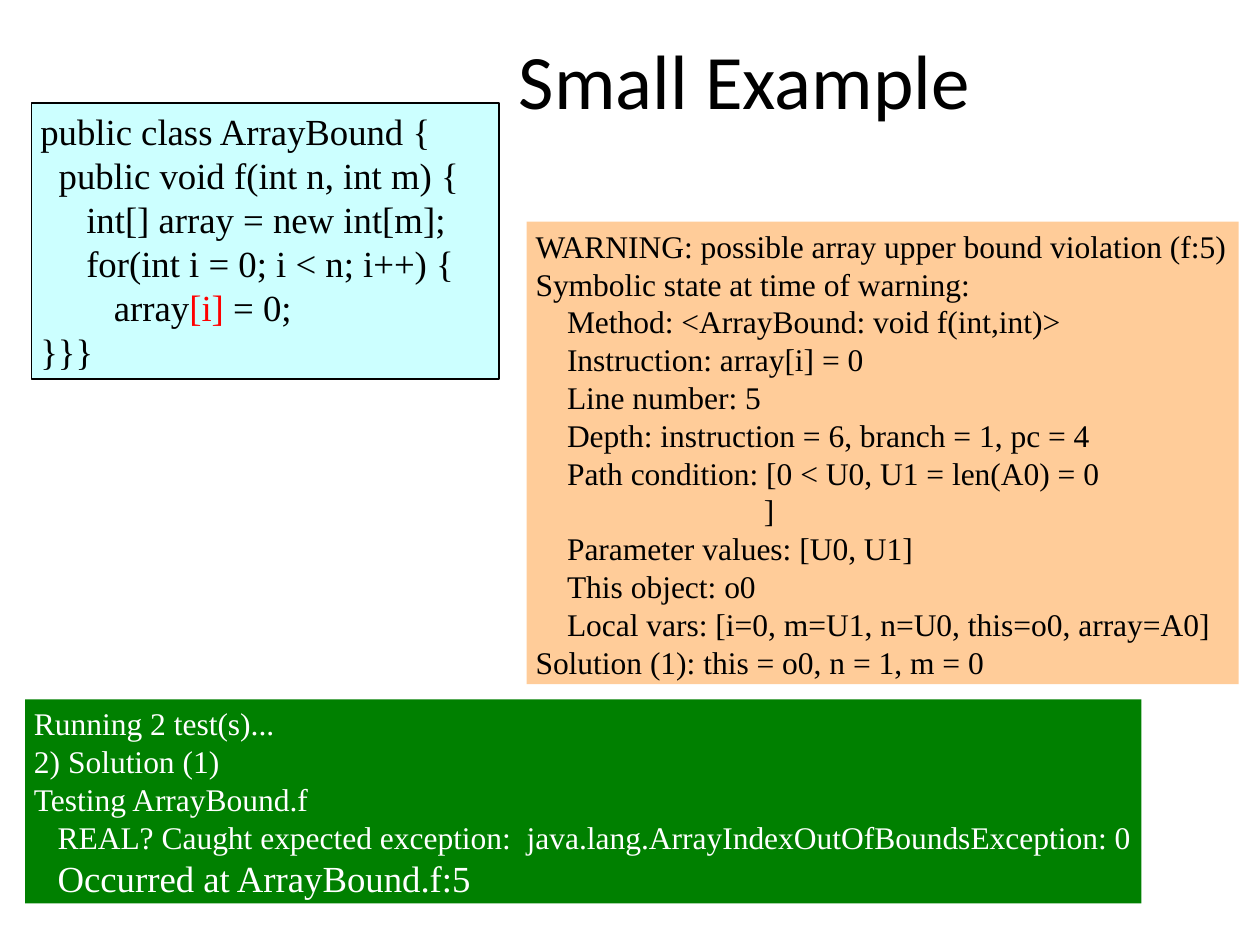
from dataclasses import dataclass

from pptx import Presentation
from pptx.dml.color import RGBColor as RGB
from pptx.enum.shapes import MSO_SHAPE as Shape
from pptx.enum.text import MSO_ANCHOR as Anchor, MSO_AUTO_SIZE as AutoSize, PP_ALIGN as Align
from pptx.util import Inches, Pt


@dataclass(frozen=True)
class Theme:
    title_font: str = "Calibri"
    code_font: str = "Times New Roman"
    title_size: int = 44
    large: int = 21
    small: int = 18
    black: str = "000000"
    white: str = "FFFFFF"
    highlight: str = "FF0000"
    source_fill: str = "CCFFFF"
    warning_fill: str = "FFCC99"
    test_fill: str = "008000"
    space_width: float = 0.25


THEME = Theme()
COLUMNS, ROWS = 100, 75
TITLE = "Small Example"
TITLE_AREA = (14.1, 0, 90, 12.5)

SOURCE = [
    (0, "public class ArrayBound {"),
    (2, "public void f(int n, int m) {"),
    (5, "int[] array = new int[m];"),
    (5, "for(int i = 0; i < n; i++) {"),
    (8, "array[i] = 0;"),
    (0, "}}}"),
]
VIOLATION = "[i]"
VIOLATION_LINE = 4

WARNING = [
    (0, "WARNING: possible array upper bound violation (f:5)"),
    (0, "Symbolic state at time of warning:"),
    (4, "Method: <ArrayBound: void f(int,int)>"),
    (4, "Instruction: array[i] = 0"),
    (4, "Line number: 5"),
    (4, "Depth: instruction = 6, branch = 1, pc = 4"),
    (4, "Path condition: [0 < U0, U1 = len(A0) = 0"),
    (29, "]"),
    (4, "Parameter values: [U0, U1]"),
    (4, "This object: o0"),
    (4, "Local vars: [i=0, m=U1, n=U0, this=o0, array=A0]"),
    (0, "Solution (1): this = o0, n = 1, m = 0"),
]

TEST_RUN = [
    (0, "Running 2 test(s)..."),
    (0, "2) Solution (1)"),
    (0, "Testing ArrayBound.f"),
    (3, "REAL? Caught expected exception:  java.lang.ArrayIndexOutOfBoundsException: 0"),
    (3, "Occurred at ArrayBound.f:5"),
]

PANELS = [
    dict(lines=SOURCE, area=(2.5, 8.2, 37.1, 21.9), fill=THEME.source_fill,
         size=THEME.large, color=THEME.black, outlined=True, wrap=True),
    dict(lines=WARNING, area=(41.8, 17.6, 56.5, 36.7), fill=THEME.warning_fill,
         size=THEME.small, color=THEME.black, outlined=False, wrap=False),
    dict(lines=TEST_RUN, area=(2, 55.5, 88.6, 16.2), fill=THEME.test_fill,
         size=THEME.small, color=THEME.white, outlined=False, wrap=False),
]


def place(deck, area):
    column, row = deck.slide_width / COLUMNS, deck.slide_height / ROWS
    return [round(part * unit) for part, unit in zip(area, (column, row) * 2)]


def style(font, name, size, color):
    font.name, font.size = name, Pt(size)
    font.color.rgb = RGB.from_string(color)


def add_title(deck, slide):
    heading = slide.shapes.add_textbox(*place(deck, TITLE_AREA)).text_frame
    heading.word_wrap = True
    heading.vertical_anchor = Anchor.MIDDLE
    line = heading.paragraphs[0]
    line.text, line.alignment = TITLE, Align.CENTER
    style(line.font, THEME.title_font, THEME.title_size, THEME.black)


def add_panel(deck, slide, lines, area, fill, size, color, outlined, wrap):
    panel = slide.shapes.add_shape(Shape.RECTANGLE, *place(deck, area))
    panel.shadow.inherit = False
    panel.fill.solid()
    panel.fill.fore_color.rgb = RGB.from_string(fill)
    if outlined:
        panel.line.color.rgb = RGB.from_string(THEME.black)
        panel.line.width = Pt(1)
    else:
        panel.line.fill.background()
    body = panel.text_frame
    body.word_wrap = wrap
    body.auto_size = AutoSize.SHAPE_TO_FIT_TEXT
    body.vertical_anchor = Anchor.TOP
    body.margin_left = body.margin_right = Inches(0.07)
    body.margin_top = body.margin_bottom = Inches(0.04)
    for number, (indent, text) in enumerate(lines):
        line = body.paragraphs[0] if number == 0 else body.add_paragraph()
        line.alignment = Align.LEFT
        style(line.font, THEME.code_font, size, color)
        margin = Pt(indent * size * THEME.space_width)
        line._p.get_or_add_pPr().set("marL", str(margin))
        if lines is SOURCE and number == VIOLATION_LINE:
            for part in text.partition(VIOLATION):
                run = line.add_run()
                run.text = part
                if part == VIOLATION:
                    run.font.color.rgb = RGB.from_string(THEME.highlight)
        else:
            line.text = text
    return body


def main():
    deck = Presentation()
    deck.slide_width, deck.slide_height = Inches(10), Inches(7.5)
    slide = deck.slides.add_slide(deck.slide_layouts[6])
    add_title(deck, slide)
    bodies = [add_panel(deck, slide, **panel) for panel in PANELS]
    bodies[-1].paragraphs[-1].font.size = Pt(THEME.large)
    deck.save("out.pptx")


if __name__ == "__main__":
    main()
